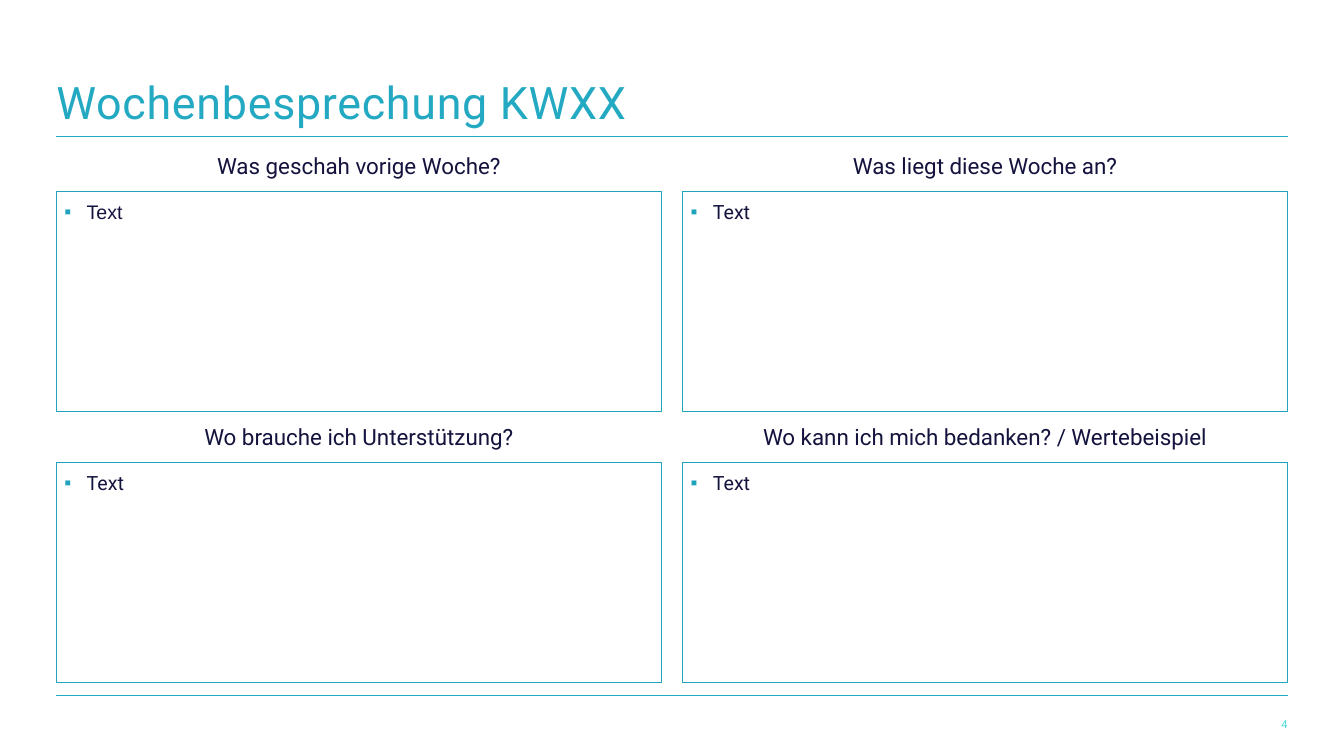
from lxml import etree
from pptx import Presentation
from pptx.dml.color import RGBColor
from pptx.enum.shapes import MSO_CONNECTOR, MSO_SHAPE
from pptx.enum.text import MSO_ANCHOR, MSO_AUTO_SIZE, PP_ALIGN
from pptx.oxml.ns import qn
from pptx.util import Inches, Pt

STRAIGHT = MSO_CONNECTOR.STRAIGHT
RECTANGLE = MSO_SHAPE.RECTANGLE
TOP, MIDDLE, BOTTOM = MSO_ANCHOR.TOP, MSO_ANCHOR.MIDDLE, MSO_ANCHOR.BOTTOM
LEFT, CENTER, RIGHT = PP_ALIGN.LEFT, PP_ALIGN.CENTER, PP_ALIGN.RIGHT
NO_AUTOFIT = MSO_AUTO_SIZE.NONE

TURQUOISE = RGBColor(0x23, 0xA9, 0xC2)
BORDER = RGBColor(0x20, 0xA3, 0xBC)
NAVY = RGBColor(0x13, 0x13, 0x3E)
PAGE_NUMBER = RGBColor(0x3D, 0xD8, 0xD9)

# Page grid, in inches
MARGIN, CONTENT_WIDTH = 0.56, 12.21
COLUMN_STEP, BOX_WIDTH = 6.21, 6
FIRST_ROW, ROW_STEP = 1.39, 2.69
HEADING_HEIGHT, BOX_TOP, BOX_HEIGHT = 0.5, 0.51, 2.18

# Heading and list font of each quadrant, row by row
QUADRANTS = [
    ("Was geschah vorige Woche?", "Arial"),
    ("Was liegt diese Woche an?", "Roboto"),
    ("Wo brauche ich Unterstützung?", "Roboto"),
    ("Wo kann ich mich bedanken? / Wertebeispiel", "Roboto"),
]


def format_frame(frame, anchor, side, vertical):
    frame.word_wrap = True
    frame.auto_size = NO_AUTOFIT
    frame.vertical_anchor = anchor
    frame.margin_left = frame.margin_right = Inches(side)
    frame.margin_top = frame.margin_bottom = Inches(vertical)


def format_para(para, size, color, align, font="Roboto"):
    para.alignment = align
    for span in para.runs:
        span.font.name = font
        span.font.size = Pt(size)
        span.font.color.rgb = color


def add_rule(page, left, top, width, color):
    rule = page.shapes.add_connector(
        STRAIGHT, Inches(left), Inches(top), Inches(left + width), Inches(top))
    rule.line.color.rgb = color
    rule.line.width = Pt(0.75)
    etree.SubElement(rule._element.spPr, qn("a:effectLst"))


def add_title(page, text):
    title = page.shapes.title
    title.left, title.top = Inches(MARGIN), Inches(0.73)
    title.width, title.height = Inches(CONTENT_WIDTH), Inches(0.54)
    title.text_frame.text = text
    format_frame(title.text_frame, BOTTOM, 0, 0)
    para = title.text_frame.paragraphs[0]
    format_para(para, 32, TURQUOISE, LEFT)
    para.runs[0].font._element.set("spc", "50")


def add_label(page, text, left, top, width, height):
    label = page.shapes.add_textbox(
        Inches(left), Inches(top), Inches(width), Inches(height))
    label.text_frame.text = text
    return label.text_frame


def add_bullet(para, color):
    properties = para._p.get_or_add_pPr()
    properties.set("marL", str(Inches(0.22)))
    properties.set("indent", str(-Inches(0.22)))
    bullet_color = etree.SubElement(properties, qn("a:buClr"))
    etree.SubElement(bullet_color, qn("a:srgbClr"), val=str(color))
    etree.SubElement(properties, qn("a:buFont"), typeface="Arial")
    etree.SubElement(properties, qn("a:buChar"), char="▪")


def add_list_box(page, left, top, font):
    box = page.shapes.add_shape(
        RECTANGLE, Inches(left), Inches(top), Inches(BOX_WIDTH), Inches(BOX_HEIGHT))
    box.shadow.inherit = False
    box.fill.background()
    box.line.color.rgb = BORDER
    box.line.width = Pt(0.75)
    box.text_frame.text = "Text"
    format_frame(box.text_frame, TOP, 0.08, 0.08)
    para = box.text_frame.paragraphs[0]
    add_bullet(para, BORDER)
    format_para(para, 14, NAVY, LEFT, font)


def add_quadrant(page, index, heading, font):
    row, column = divmod(index, 2)
    left = MARGIN + column * COLUMN_STEP
    top = FIRST_ROW + row * ROW_STEP
    add_list_box(page, left, top + BOX_TOP, font)
    frame = add_label(page, heading, left, top, BOX_WIDTH, HEADING_HEIGHT)
    format_frame(frame, MIDDLE, 0.1, 0.05)
    format_para(frame.paragraphs[0], 16, NAVY, CENTER)
    add_rule(page, left, top + BOX_TOP, BOX_WIDTH, BORDER)


def add_page_number(page, number):
    frame = add_label(page, number, 9.88, 7.12, 2.89, 0.13)
    format_frame(frame, BOTTOM, 0, 0)
    format_para(frame.paragraphs[0], 8, PAGE_NUMBER, RIGHT, "Arial")


def main():
    deck = Presentation()
    deck.slide_width, deck.slide_height = Inches(13.33), Inches(7.5)
    page = deck.slides.add_slide(deck.slide_layouts[5])

    # Title, rules and page number
    add_title(page, "Wochenbesprechung KWXX")
    for top in (1.35, 6.9):
        add_rule(page, MARGIN, top, CONTENT_WIDTH, TURQUOISE)
    add_page_number(page, "4")

    # Four question boxes
    for index, (heading, font) in enumerate(QUADRANTS):
        add_quadrant(page, index, heading, font)

    deck.save("out.pptx")


if __name__ == "__main__":
    main()
